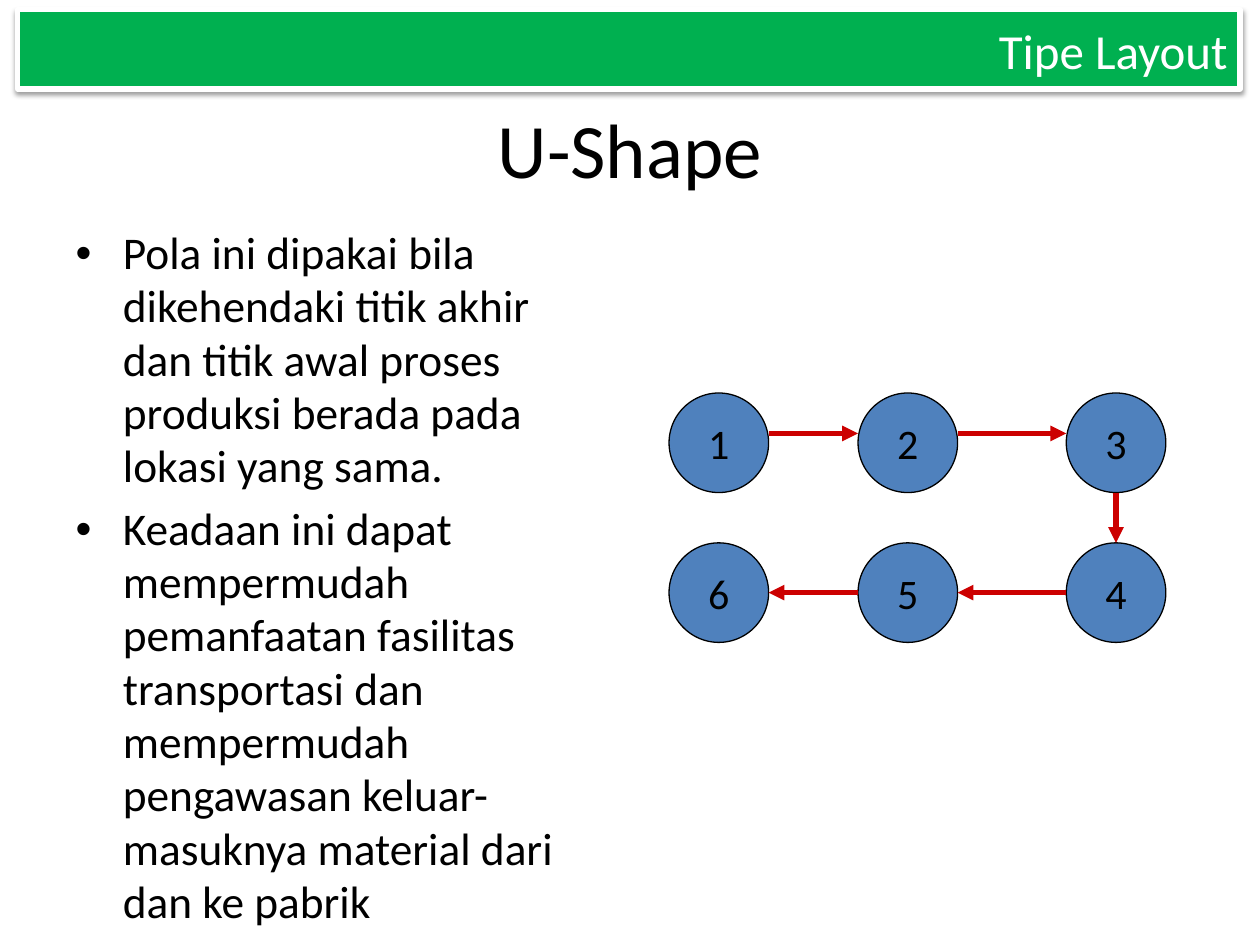
from dataclasses import dataclass

from lxml.etree import SubElement
from pptx import Presentation
from pptx.dml.color import RGBColor
from pptx.enum.shapes import MSO_CONNECTOR, MSO_SHAPE
from pptx.enum.text import MSO_ANCHOR, MSO_AUTO_SIZE, PP_ALIGN
from pptx.oxml.ns import qn
from pptx.shapes.autoshape import Shape
from pptx.shapes.shapetree import GroupShapes
from pptx.text.text import _Paragraph
from pptx.util import Pt

BLACK = RGBColor(0x00, 0x00, 0x00)
WHITE = RGBColor(0xFF, 0xFF, 0xFF)
GREEN = RGBColor(0x00, 0xB0, 0x50)
BLUE = RGBColor(0x4F, 0x81, 0xBD)
RED = RGBColor(0xCC, 0x00, 0x00)
FONT = "Calibri"

DIAMETER = 56.9
RADIUS = DIAMETER / 2
COLUMNS = (382.3, 490.3, 609.3)
TOP_ROW, BOTTOM_ROW = 224.6, 310.2
TOP_ARROW_Y = 247.7

POINTS = (
    "Pola ini dipakai bila dikehendaki titik akhir dan titik awal proses "
    "produksi berada pada lokasi yang sama.",
    "Keadaan ini dapat mempermudah pemanfaatan fasilitas transportasi dan "
    "mempermudah pengawasan keluar-masuknya material dari dan ke pabrik",
)


@dataclass(frozen=True)
class Station:
    label: str
    left: float
    top: float


@dataclass(frozen=True)
class Arrow:
    x1: float
    y1: float
    x2: float
    y2: float


def add_span(para: _Paragraph, text: str, size: float, color: RGBColor) -> None:
    span = para.add_run()
    span.text = text
    span.font.name = FONT
    span.font.size = Pt(size)
    span.font.color.rgb = color


def place(box: Shape, left: float, top: float, width: float, height: float) -> None:
    box.left, box.top = Pt(left), Pt(top)
    box.width, box.height = Pt(width), Pt(height)


def paint(box: Shape, fill: RGBColor, line: RGBColor, weight: float) -> None:
    box.shadow.inherit = False
    box.fill.solid()
    box.fill.fore_color.rgb = fill
    box.line.color.rgb = line
    box.line.width = Pt(weight)


def draw_station(shapes: GroupShapes, station: Station) -> None:
    circle = shapes.add_shape(MSO_SHAPE.OVAL, Pt(station.left), Pt(station.top),
                              Pt(DIAMETER), Pt(DIAMETER))
    paint(circle, BLUE, BLACK, 0.75)
    frame = circle.text_frame
    frame.word_wrap = False
    frame.vertical_anchor = MSO_ANCHOR.MIDDLE
    para = frame.paragraphs[0]
    para.alignment = PP_ALIGN.CENTER
    add_span(para, station.label, 24, BLACK)


def draw_arrow(shapes: GroupShapes, arrow: Arrow) -> None:
    line = shapes.add_connector(MSO_CONNECTOR.STRAIGHT, Pt(arrow.x1), Pt(arrow.y1),
                                Pt(arrow.x2), Pt(arrow.y2))
    line.line.color.rgb = RED
    line.line.width = Pt(3)
    SubElement(line.line._get_or_add_ln(), qn("a:tailEnd"), type="triangle")
    SubElement(line._element.spPr, qn("a:effectLst"))


def add_drop_shadow(box: Shape) -> None:
    effects = box._element.spPr.find(qn("a:effectLst"))
    shadow = SubElement(effects, qn("a:outerShdw"), blurRad=str(Pt(3.1)),
                        dist=str(Pt(1.6)), dir="5400000", rotWithShape="0")
    color = SubElement(shadow, qn("a:srgbClr"), val=str(BLACK))
    SubElement(color, qn("a:alpha"), val="38000")


def main() -> None:
    deck = Presentation()
    deck.slide_width, deck.slide_height = Pt(720), Pt(540)
    page = deck.slides.add_slide(deck.slide_layouts[1])

    # Title
    title = page.shapes.title
    place(title, 36, 39.6, 648, 90)
    title.text_frame.vertical_anchor = MSO_ANCHOR.MIDDLE
    para = title.text_frame.paragraphs[0]
    para.alignment = PP_ALIGN.CENTER
    add_span(para, "U-Shape", 44, BLACK)

    # Bulleted explanation
    body = page.placeholders[1]
    place(body, 36, 126, 318, 356.4)
    frame = body.text_frame
    frame.auto_size = MSO_AUTO_SIZE.NONE
    for index, text in enumerate(POINTS):
        para = frame.add_paragraph() if index else frame.paragraphs[0]
        para.line_spacing = 0.98
        add_span(para, text, 25.9, BLACK)

    # U-shaped flow: out along the top row, back along the bottom row
    flow = page.shapes.add_group_shape().shapes
    route = [(x, TOP_ROW) for x in COLUMNS]
    route += [(x, BOTTOM_ROW) for x in reversed(COLUMNS)]
    for number, (left, top) in enumerate(route, 1):
        draw_station(flow, Station(str(number), left, top))

    gaps = [(a + DIAMETER, b) for a, b in zip(COLUMNS, COLUMNS[1:])]
    turn_x = COLUMNS[-1] + RADIUS
    bottom_y = BOTTOM_ROW + RADIUS
    arrows = [Arrow(a, TOP_ARROW_Y, b, TOP_ARROW_Y) for a, b in gaps]
    arrows.append(Arrow(turn_x, TOP_ROW + DIAMETER, turn_x, BOTTOM_ROW))
    arrows += [Arrow(b, bottom_y, a, bottom_y) for a, b in reversed(gaps)]
    for arrow in arrows:
        draw_arrow(flow, arrow)

    # Header bar
    header = page.shapes.add_shape(MSO_SHAPE.RECTANGLE, Pt(10), Pt(5.6),
                                   Pt(698.6), Pt(45.2))
    paint(header, GREEN, WHITE, 3)
    add_drop_shadow(header)
    header.text_frame.vertical_anchor = MSO_ANCHOR.MIDDLE
    para = header.text_frame.paragraphs[0]
    para.alignment = PP_ALIGN.RIGHT
    add_span(para, "Tipe Layout", 28, WHITE)

    deck.save("out.pptx")


if __name__ == "__main__":
    main()
